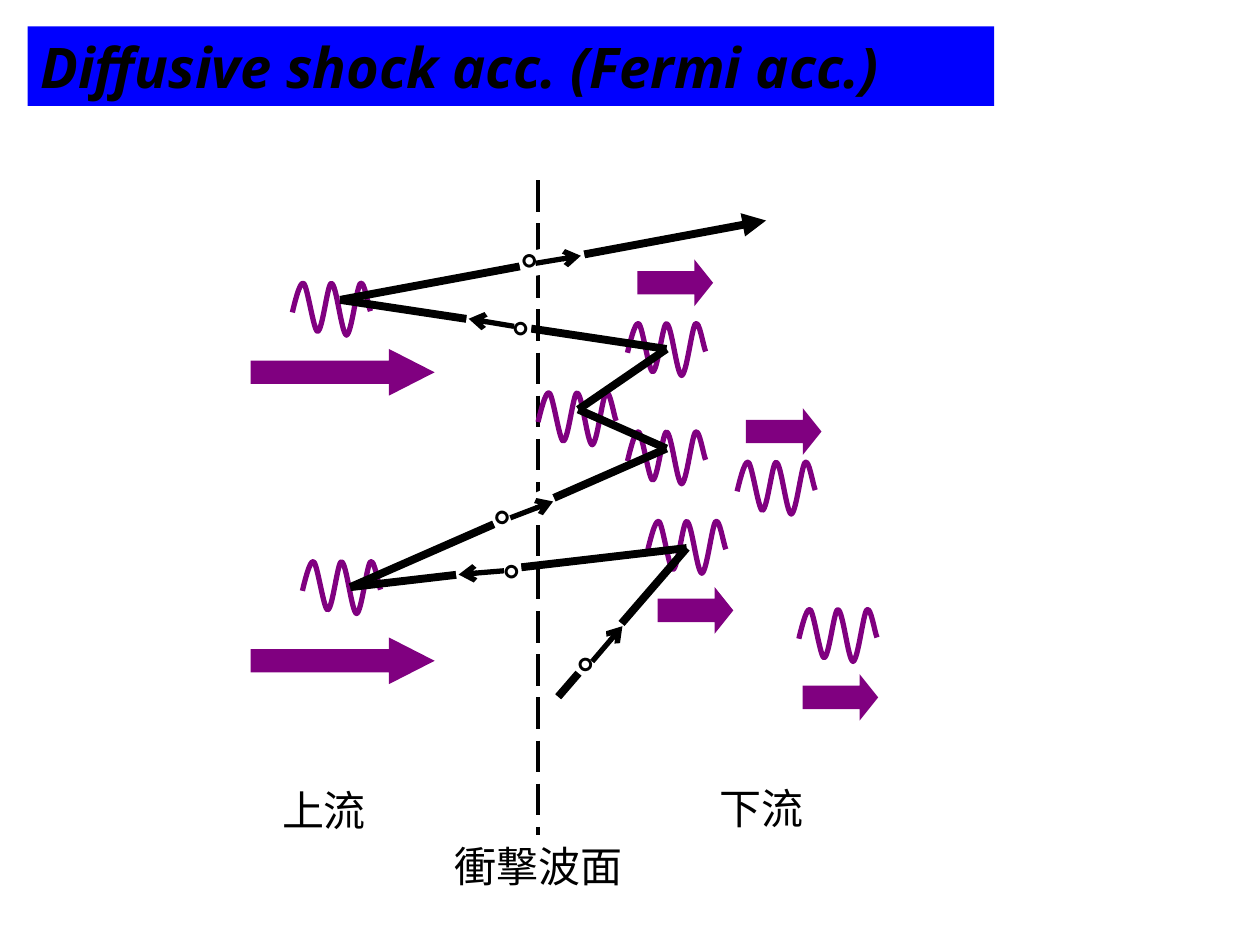
import math
from dataclasses import dataclass

import lxml.etree
import pptx
import pptx.dml.color
import pptx.enum.dml
import pptx.enum.shapes
import pptx.enum.text
import pptx.oxml.ns
import pptx.util

Inches = pptx.util.Inches
Shapes = pptx.enum.shapes.MSO_SHAPE


@dataclass(frozen=True)
class Theme:
    ink: str = "000000"
    paper: str = "FFFFFF"
    banner: str = "0000FF"
    flow: str = "800080"
    title_font: str = "Noto Sans"
    body_font: str = "Calibri"
    title_size: int = 32
    label_size: int = 24


# One wave: a start point, then three Bezier points per segment
WAVE = [(0, .26),
        (.01, .22), (.06, 0), (.09, .03),
        (.12, .05), (.17, .41), (.20, .41),
        (.24, .41), (.28, .02), (.31, .03),
        (.35, .03), (.39, .43), (.43, .44),
        (.47, .43), (.51, .06), (.54, .03),
        (.57, 0), (.60, .20), (.62, .25)]
WAVE_POSITIONS = [(4.98, 2.54), (2.32, 2.22), (6.34, 4.81), (5.85, 3.64), (5.14, 4.11),
                  (2.40, 4.43), (4.98, 3.40), (4.27, 3.09)]

# The particle's zigzag, from its entry to its escape
TRAJECTORY = [(4.43, 5.53), (5.45, 4.35), (2.78, 4.66), (5.29, 3.56),
              (4.59, 3.25), (5.29, 2.77), (2.70, 2.38), (6.08, 1.75)]

# Left, top, width and head length of the flow arrows
FLOW_ARROWS = [(1.99, 5.06, 1.46, .979), (1.99, 2.77, 1.46, .979),
               (5.06, 2.06, .60, .399), (5.22, 4.66, .60, .399),
               (6.37, 5.35, .60, .399), (5.92, 3.24, .60, .399)]

# Gap centre, rotation, and the ends of the small arrow
PARTICLES = [((4.38, 2.06), 348.2, (4.25, 2.09), (4.61, 2.03)),
             ((4.78, 5.16), 309.4, (4.70, 5.25), (4.94, 4.97)),
             ((3.88, 4.54), 172.7, (4.00, 4.53), (3.64, 4.56)),
             ((4.16, 4.06), 336.1, (4.05, 4.11), (4.39, 3.98)),
             ((3.96, 2.56), 187.1, (4.08, 2.59), (3.72, 2.53))]

LABELS = [("衝撃波面", 3.51, 6.62, 1.53), ("上流", 2.14, 6.18, .87), ("下流", 5.61, 6.16, .87)]


class SlideBuilder:
    def __init__(self, slide, theme):
        self.slide = slide
        self.theme = theme

    def color(self, value):
        return pptx.dml.color.RGBColor.from_string(value)

    def paint(self, shape, fill):
        shape.shadow.inherit = False
        shape.fill.solid()
        shape.fill.fore_color.rgb = self.color(fill)
        shape.line.fill.background()

    def stroke(self, line, color, width):
        line.color.rgb = self.color(color)
        line.width = pptx.util.Pt(width)

    def font(self, paragraph, name, size, bold=False, italic=False):
        for run in paragraph.runs:
            run.font.name = name
            run.font.size = pptx.util.Pt(size)
            run.font.bold = bold
            run.font.italic = italic
            run.font.color.rgb = self.color(self.theme.ink)

    def title(self, text, left, top, width, height):
        shape = self.slide.shapes.title
        shape.left, shape.top = Inches(left), Inches(top)
        shape.width, shape.height = Inches(width), Inches(height)
        self.paint(shape, self.theme.banner)
        frame = shape.text_frame
        frame.text = text
        frame.auto_size = pptx.enum.text.MSO_AUTO_SIZE.NONE
        frame.vertical_anchor = pptx.enum.text.MSO_ANCHOR.MIDDLE
        paragraph = frame.paragraphs[0]
        paragraph.alignment = pptx.enum.text.PP_ALIGN.LEFT
        self.font(paragraph, self.theme.title_font, self.theme.title_size, True, True)

    def label(self, text, left, top, width, bold=False):
        box = self.slide.shapes.add_textbox(Inches(left), Inches(top), Inches(width), Inches(.5))
        frame = box.text_frame
        frame.text = text
        frame.word_wrap = False
        frame.auto_size = pptx.enum.text.MSO_AUTO_SIZE.SHAPE_TO_FIT_TEXT
        self.font(frame.paragraphs[0], self.theme.body_font, self.theme.label_size, bold)
        return box

    def line(self, start, end, width, head=None, dash=None):
        connector = self.slide.shapes.add_connector(
            pptx.enum.shapes.MSO_CONNECTOR.STRAIGHT, *map(Inches, start + end))
        self.stroke(connector.line, self.theme.ink, width)
        if dash:
            connector.line.dash_style = dash
        qualified = pptx.oxml.ns.qn
        if head:
            outline = connector.line._get_or_add_ln()
            lxml.etree.SubElement(outline, qualified("a:tailEnd"), type=head)
        lxml.etree.SubElement(connector._element.spPr, qualified("a:effectLst"))

    def wave(self, left, top):
        points = [(Inches(left + x), Inches(top + y)) for x, y in WAVE]
        builder = self.slide.shapes.build_freeform(*points[0])
        builder.add_line_segments(points[1:], close=False)
        shape = builder.convert_to_shape()
        shape.shadow.inherit = False
        shape.fill.background()
        self.stroke(shape.line, self.theme.flow, 3)
        # Join every three straight segments into one Bezier curve
        qualified = pptx.oxml.ns.qn
        segments = list(shape._element.iter(qualified("a:lnTo")))
        outline = segments[0].getparent()
        for first in range(0, len(segments), 3):
            curve = lxml.etree.SubElement(outline, qualified("a:cubicBezTo"))
            for segment in segments[first:first + 3]:
                curve.append(segment[0])
                outline.remove(segment)

    def flow_arrow(self, left, top, width, head):
        shape = self.slide.shapes.add_shape(
            Shapes.RIGHT_ARROW, Inches(left), Inches(top), Inches(width), Inches(.37))
        shape.adjustments[0] = .5
        shape.adjustments[1] = head
        self.paint(shape, self.theme.flow)

    def particle(self, center, rotation, start, end):
        x, y = center
        width, height = .51, .19
        gap = self.slide.shapes.add_shape(
            Shapes.RECTANGLE, Inches(x - width / 2), Inches(y - height / 2),
            Inches(width), Inches(height))
        self.paint(gap, self.theme.paper)
        self.stroke(gap.line, self.theme.paper, .75)
        gap.rotation = rotation
        # The dot keeps the same offset from the gap in the rotated frame
        along, across, angle = -.07, -.13, math.radians(rotation)
        dot_x = x + along * math.cos(angle) - across * math.sin(angle)
        dot_y = y + along * math.sin(angle) + across * math.cos(angle)
        dot = self.label("。", dot_x - .27, dot_y - .25, .54, bold=True)
        dot.rotation = rotation
        self.line(start, end, 3, head="arrow")


def main():
    presentation = pptx.Presentation()
    presentation.slide_width, presentation.slide_height = Inches(10), Inches(7.5)
    slide = presentation.slides.add_slide(presentation.slide_layouts[5])
    builder = SlideBuilder(slide, Theme())

    # Title
    builder.title("Diffusive shock acc. (Fermi acc.)", .22, .21, 7.67, .63)

    # Shock front and scattering waves
    builder.line((4.27, 1.43), (4.27, 6.63), 2.25, dash=pptx.enum.dml.MSO_LINE.LONG_DASH)
    for position in WAVE_POSITIONS:
        builder.wave(*position)

    # Particle trajectory, with an arrowhead on its last leg
    legs = list(zip(TRAJECTORY, TRAJECTORY[1:]))
    for start, end in legs[:-1]:
        builder.line(start, end, 4.5)
    builder.line(*legs[-1], 4.5, head="triangle")

    # Flow arrows and region labels
    for arrow in FLOW_ARROWS:
        builder.flow_arrow(*arrow)
    for label in LABELS:
        builder.label(*label)

    # Particles moving along the trajectory
    for particle in PARTICLES:
        builder.particle(*particle)

    presentation.save("out.pptx")


if __name__ == "__main__":
    main()
